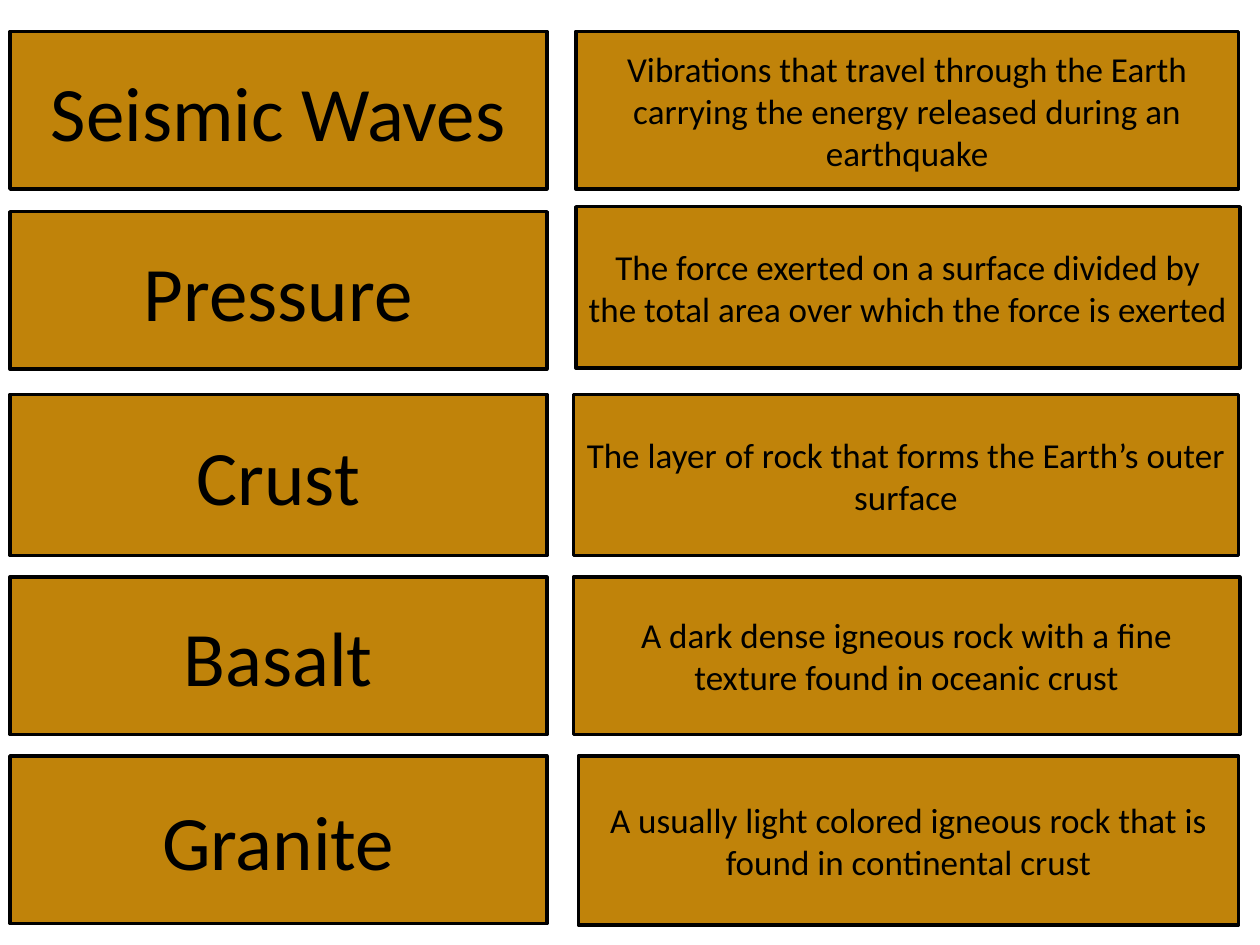
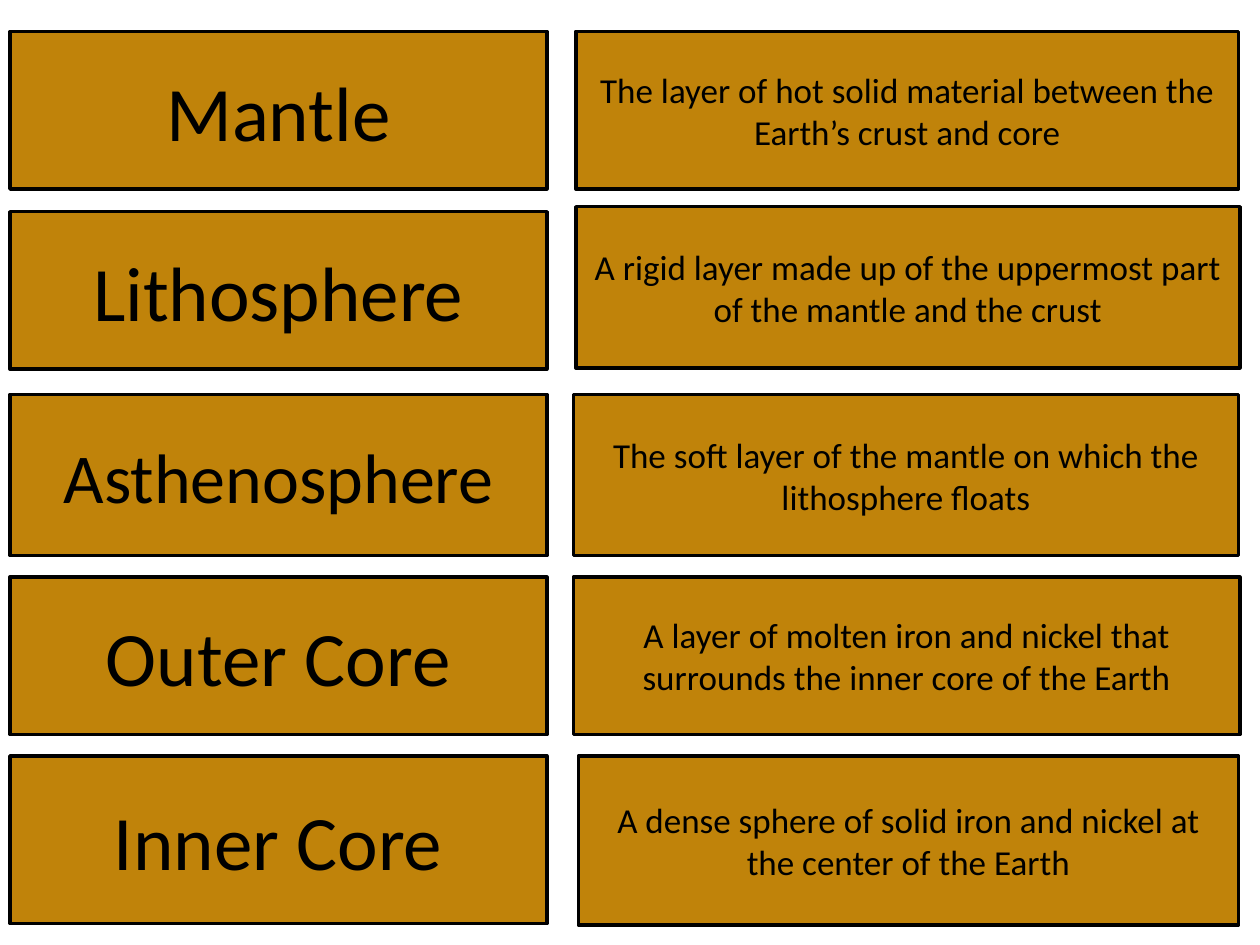
import pptx
import pptx.util
import pptx.dml.color
import pptx.enum.shapes
import pptx.enum.text

GRID_COLUMNS = 10
GRID_ROWS = 7.5
TERM_LEFT, TERM_WIDTH = 0.08, 4.26
TERM_SIZE, LONG_TERM_SIZE, DEFINITION_SIZE = 44, 40, 20
LONG_TERM_LENGTH = 13

TERM_ROWS = [(0.25, 1.25), (1.68, 1.25), (3.13, 1.28), (4.58, 1.25), (6, 1.33)]
DEFINITION_BOXES = [
    (4.57, 0.25, 5.26, 1.25),
    (4.57, 1.64, 5.27, 1.28),
    (4.55, 3.13, 5.28, 1.28),
    (4.55, 4.58, 5.29, 1.25),
    (4.59, 6, 5.24, 1.34),
]

GLOSSARY = [
    [
        ("Seismic Waves", "Vibrations that travel through the Earth carrying the energy released during an earthquake"),
        ("Pressure", "The force exerted on a surface divided by the total area over which the force is exerted"),
        ("Crust", "The layer of rock that forms the Earth’s outer surface"),
        ("Basalt", "A dark dense igneous rock with a fine texture found in oceanic crust"),
        ("Granite", "A usually light colored igneous rock that is found in continental crust"),
    ],
    [
        ("Mantle", "The layer of hot solid material between the Earth’s crust and core"),
        ("Lithosphere", "A rigid layer made up of the uppermost part of the mantle and the crust"),
        ("Asthenosphere", "The soft layer of the mantle on which the lithosphere floats"),
        ("Outer Core", "A layer of molten iron and nickel that surrounds the inner core of the Earth"),
        ("Inner Core", "A dense sphere of solid iron and nickel at the center of the Earth"),
    ],
]


def color(hex_string):
    return pptx.dml.color.RGBColor.from_string(hex_string)


def apply_format(target, values):
    for name, value in values.items():
        setattr(target, name, value)


class CardDeck:
    fill = "C0830A"
    ink = "000000"
    font = "Calibri"
    line_width = 2

    def __init__(self):
        self.presentation = pptx.Presentation()
        self.presentation.slide_width = pptx.util.Inches(10)
        self.presentation.slide_height = pptx.util.Inches(7.5)
        self.slide = None

    def add_slide(self):
        self.slide = self.presentation.slides.add_slide(self.presentation.slide_layouts[6])

    def place(self, left, top, width, height):
        column = self.presentation.slide_width / GRID_COLUMNS
        row = self.presentation.slide_height / GRID_ROWS
        return [round(length) for length in (left * column, top * row, width * column, height * row)]

    def add_card(self, text, box, size):
        shape = self.slide.shapes.add_shape(
            pptx.enum.shapes.MSO_SHAPE.FLOWCHART_PROCESS, *self.place(*box))
        shape.shadow.inherit = False
        shape.fill.solid()
        shape.fill.fore_color.rgb = color(self.fill)
        shape.line.color.rgb = color(self.ink)
        shape.line.width = pptx.util.Pt(self.line_width)
        apply_format(shape.text_frame, {
            "word_wrap": True,
            "vertical_anchor": pptx.enum.text.MSO_ANCHOR.MIDDLE,
        })
        paragraph = shape.text_frame.paragraphs[0]
        paragraph.alignment = pptx.enum.text.PP_ALIGN.CENTER
        run = paragraph.add_run()
        run.text = text
        apply_format(run.font, {"name": self.font, "size": pptx.util.Pt(size)})
        run.font.color.rgb = color(self.ink)

    def add_term(self, term, top, height):
        size = LONG_TERM_SIZE if len(term.replace(" ", "")) >= LONG_TERM_LENGTH else TERM_SIZE
        self.add_card(term, (TERM_LEFT, top, TERM_WIDTH, height), size)

    def add_definition(self, definition, box):
        self.add_card(definition, box, DEFINITION_SIZE)


def main():
    deck = CardDeck()
    for entries in GLOSSARY:
        deck.add_slide()
        for (term, definition), term_row, box in zip(entries, TERM_ROWS, DEFINITION_BOXES):
            deck.add_term(term, *term_row)
            deck.add_definition(definition, box)
    deck.presentation.save("out.pptx")


if __name__ == "__main__":
    main()
